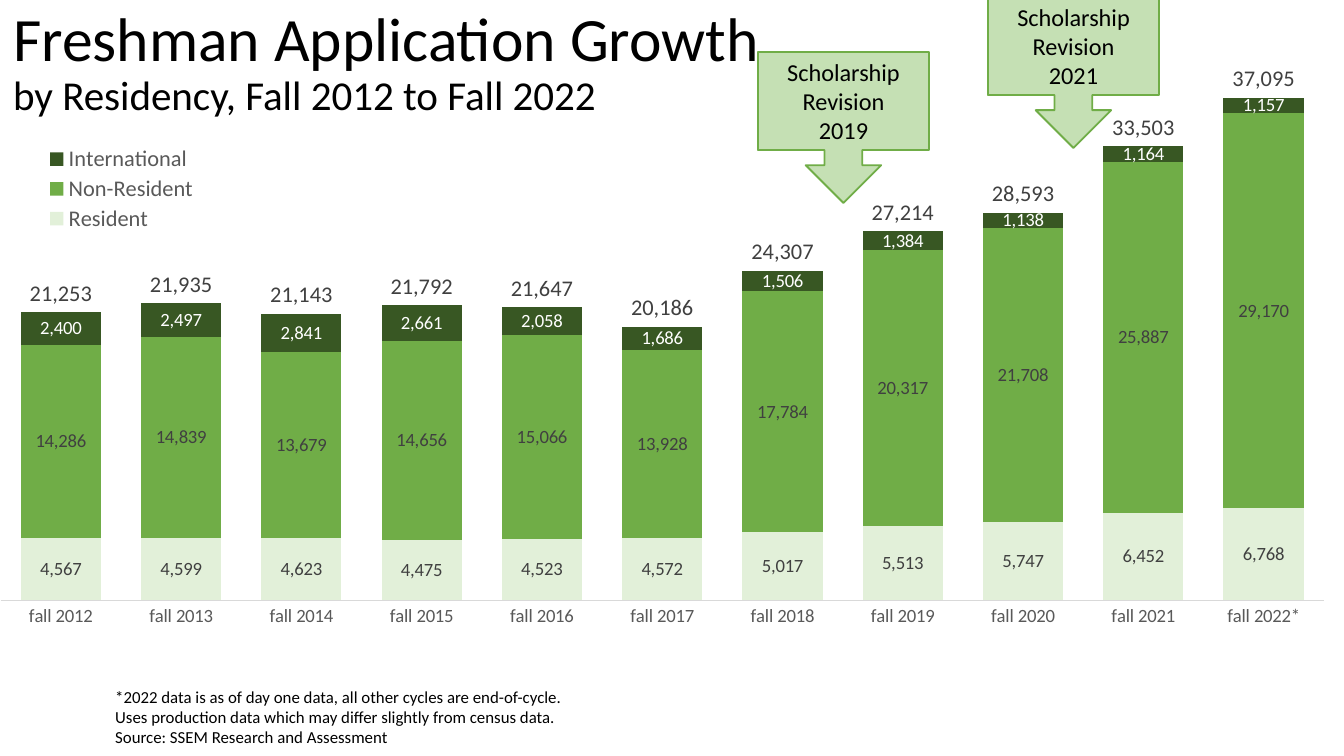
from lxml import etree
from pptx import Presentation
from pptx import util as u
from pptx.chart.data import CategoryChartData
from pptx.dml.color import RGBColor
from pptx.enum import chart as ch, shapes, text
from pptx.oxml import parse_xml
from pptx.oxml.ns import nsdecls, qn

SCALE = u.Inches(10) / 1344
FONT = "Calibri"
GREEN = "70AD47"
SEASONS = [f"fall {year}" for year in range(2012, 2022)] + ["fall 2022*"]
RESIDENCIES = [
    ("Resident", "E2F0D9", "404040",
     [4567, 4599, 4623, 4475, 4523, 4572, 5017, 5513, 5747, 6452, 6768]),
    ("Non-Resident", GREEN, "404040",
     [14286, 14839, 13679, 14656, 15066, 13928, 17784, 20317, 21708, 25887, 29170]),
    ("International", "385723", "FFFFFF",
     [2400, 2497, 2841, 2661, 2058, 1686, 1506, 1384, 1138, 1164, 1157]),
]
TOTALS = [21253, 21935, 21143, 21792, 21647, 20186, 24307, 27214, 28593, 33503, 37095]
NOTES = [
    "*2022 data is as of day one data, all other cycles are end-of-cycle.",
    "Uses production data which may differ slightly from census data.",
    "Source: SSEM Research and Assessment",
]


def emu(box):
    """Turn px lengths into EMU."""
    return [round(length * SCALE) for length in box]


def rgb(value):
    """Return the colour of a hex string."""
    return RGBColor.from_string(value)


def set_font(font, size, color="000000"):
    """Set face, size and colour of a font."""
    font.name, font.size = FONT, u.Pt(size)
    font.color.rgb = rgb(color)


def add_run(paragraph, words, size):
    """Add one run of black text."""
    run = paragraph.add_run()
    run.text = words
    set_font(run.font, size)


def add_lines(frame, lines, size, align):
    """Write each line as a paragraph of the frame."""
    for index, line in enumerate(lines):
        paragraph = frame.paragraphs[0] if index == 0 else frame.add_paragraph()
        paragraph.alignment = align
        add_run(paragraph, line, size)


def add_heading(slide, box):
    """Place the title and its subtitle."""
    frame = slide.shapes.add_textbox(*emu(box)).text_frame
    frame.word_wrap = True
    frame.vertical_anchor = text.MSO_ANCHOR.MIDDLE
    heading = frame.paragraphs[0]
    heading.line_spacing = 0.9
    add_run(heading, "Freshman Application Growth", 33)
    heading.add_line_break()
    add_run(heading, "by Residency, Fall 2012 to Fall 2022", 22)


def add_notes(slide, box):
    """Place the remarks below the chart."""
    frame = slide.shapes.add_textbox(*emu(box)).text_frame
    frame.word_wrap = False
    add_lines(frame, NOTES, 9, text.PP_ALIGN.LEFT)


def add_callout(slide, box, year):
    """Place an arrow callout for a scholarship revision."""
    callout = slide.shapes.add_shape(
        shapes.MSO_SHAPE.DOWN_ARROW_CALLOUT, *emu(box))
    callout.shadow.inherit = False
    callout.fill.solid()
    callout.fill.fore_color.rgb = rgb("C5E0B4")
    callout.line.color.rgb = rgb(GREEN)
    callout.line.width = u.Pt(1)
    frame = callout.text_frame
    frame.word_wrap = True
    frame.vertical_anchor = text.MSO_ANCHOR.MIDDLE
    add_lines(frame, ["Scholarship", "Revision", year], 13, text.PP_ALIGN.CENTER)


def make_layout(parent, x, y, w, h, target=""):
    """Return a manual layout that replaces the parent's own."""
    for old in parent.findall(qn("c:layout")):
        parent.remove(old)
    return parse_xml(
        f'<c:layout {nsdecls("c")}><c:manualLayout>{target}'
        '<c:xMode val="edge"/><c:yMode val="edge"/>'
        f'<c:x val="{x}"/><c:y val="{y}"/><c:w val="{w}"/><c:h val="{h}"/>'
        '</c:manualLayout></c:layout>')


def label_series(series, size, color, position):
    """Show the values of a series."""
    labels = series.data_labels
    labels.show_value = True
    labels.number_format, labels.number_format_is_linked = "#,##0", False
    labels.position = position
    set_font(labels.font, size, color)


def move_totals_to_line(chart):
    """Turn the last column series into a line on the same axes."""
    columns = chart.plots[0]
    bars = columns.series[len(RESIDENCIES)]._element.getparent()
    totals = bars.findall(qn("c:ser"))[-1]
    for flag in totals.findall(qn("c:invertIfNegative")):
        totals.remove(flag)
    line = parse_xml(
        f'<c:lineChart {nsdecls("c")}><c:grouping val="standard"/>'
        '<c:varyColors val="0"/><c:marker val="1"/></c:lineChart>')
    line.insert(2, totals)
    for axis in bars.findall(qn("c:axId")):
        etree.SubElement(line, qn("c:axId")).set("val", axis.get("val"))
    bars.addnext(line)


def style_legend(chart):
    """Place the legend and hide the entry of the totals."""
    chart.has_legend = True
    legend = chart.legend
    legend.position = ch.XL_LEGEND_POSITION.LEFT
    legend.include_in_layout = False
    set_font(legend.font, 12, "595959")
    element = legend._element
    place = make_layout(element, 0.03, 0.17, 0.12, 0.15)
    entry = parse_xml(
        f'<c:legendEntry {nsdecls("c")}><c:idx val="{len(RESIDENCIES)}"/>'
        '<c:delete val="1"/></c:legendEntry>')
    position = element.find(qn("c:legendPos"))
    position.addnext(place)
    position.addnext(entry)


def style_axes(chart):
    """Show a plain category axis and hide the value axis."""
    seasons, counts = chart.category_axis, chart.value_axis
    seasons.major_tick_mark = seasons.minor_tick_mark = ch.XL_TICK_MARK.NONE
    seasons.format.line.color.rgb = rgb("D9D9D9")
    seasons.format.line.width = u.Pt(0.75)
    set_font(seasons.tick_labels.font, 10, "595959")
    counts.minimum_scale, counts.maximum_scale = 0, 40000
    counts.has_major_gridlines = False
    counts.visible = False


def add_applications(slide, box):
    """Place the stacked columns with their totals."""
    data = CategoryChartData(number_format="#,##0")
    data.categories = SEASONS
    for name, _, _, values in RESIDENCIES:
        data.add_series(name, values)
    data.add_series("Series 4", TOTALS)
    chart = slide.shapes.add_chart(
        ch.XL_CHART_TYPE.COLUMN_STACKED, *emu(box), data).chart
    chart.has_title = False
    set_font(chart.font, 10)
    move_totals_to_line(chart)

    columns, line = chart.plots
    columns.gap_width, columns.overlap = 50, 100
    columns.vary_by_categories = False
    for series, (_, fill, ink, _) in zip(columns.series, RESIDENCIES):
        series.format.fill.solid()
        series.format.fill.fore_color.rgb = rgb(fill)
        label_series(series, 10, ink, ch.XL_LABEL_POSITION.CENTER)
    totals = line.series[0]
    totals.smooth = False
    totals.format.line.fill.background()
    totals.marker.style = ch.XL_MARKER_STYLE.NONE
    label_series(totals, 12, "404040", ch.XL_LABEL_POSITION.ABOVE)

    style_axes(chart)
    style_legend(chart)
    area = columns._element.getparent()
    area.insert(0, make_layout(
        area, 0, 0.033, 0.985, 0.88, '<c:layoutTarget val="inner"/>'))


def main():
    """Build and save the slide."""
    deck = Presentation()
    deck.slide_width, deck.slide_height = emu((1344, 756))
    slide = deck.slides.add_slide(deck.slide_layouts[6])
    add_heading(slide, (0, 0, 948, 128))
    add_notes(slide, (102, 680, 485, 75))
    add_applications(slide, (0, 38, 1344, 616))
    add_callout(slide, (988, -3, 171, 151), "2021")
    add_callout(slide, (758, 52, 171, 151), "2019")
    deck.save("out.pptx")


if __name__ == "__main__":
    main()
